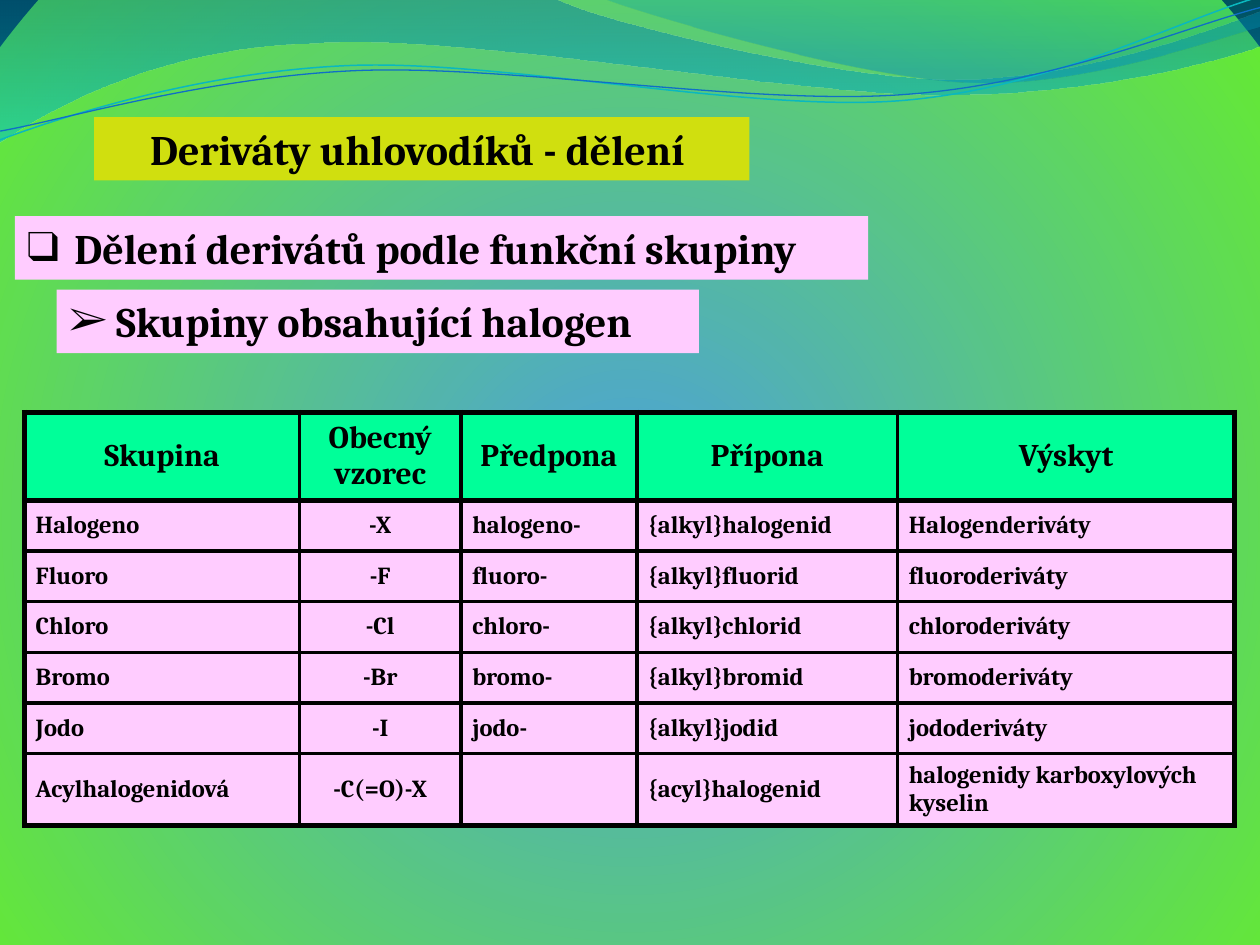
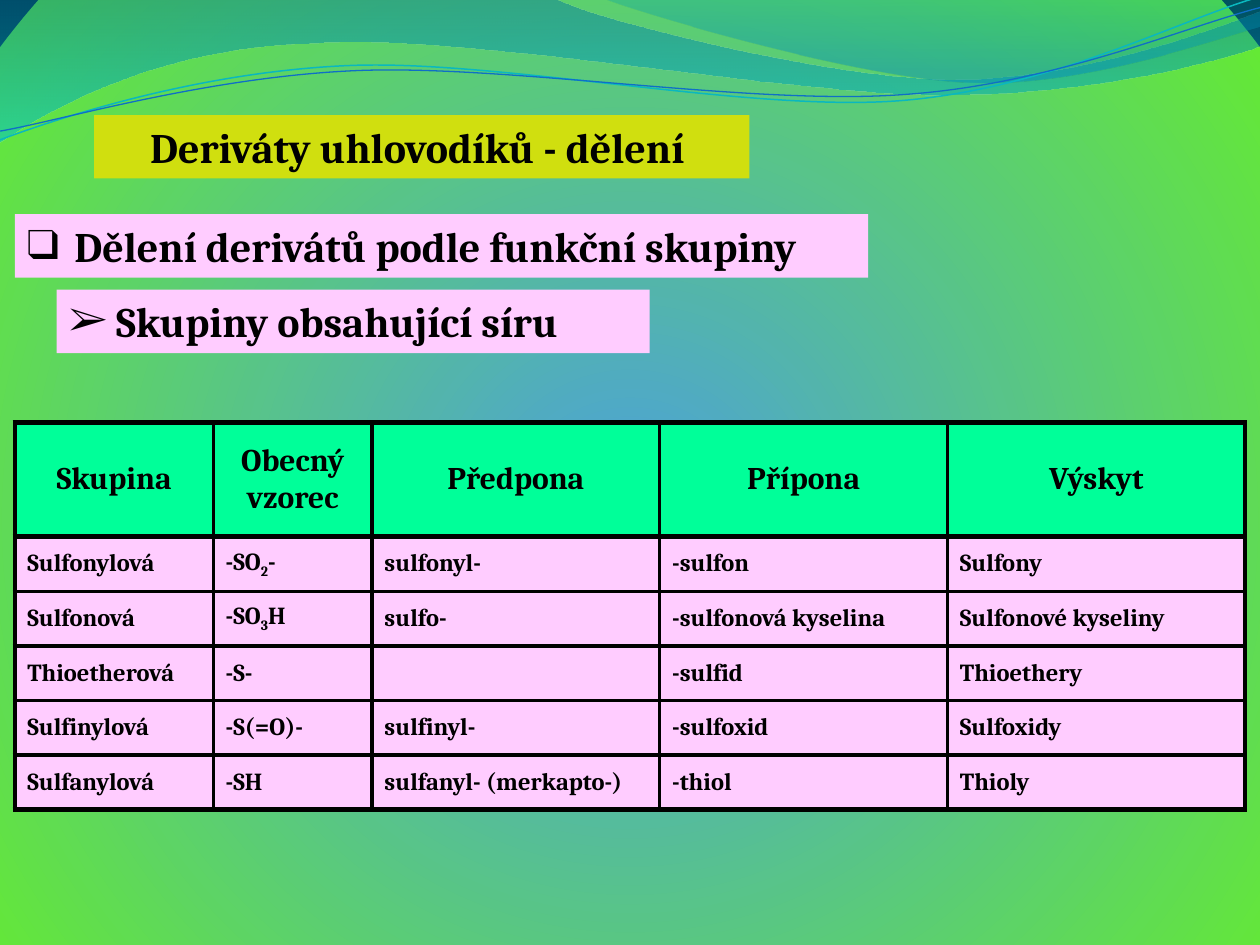
import dataclasses
import math

import pptx
import pptx.dml.color
import pptx.enum.text
import pptx.oxml
import pptx.oxml.ns
import pptx.util
from lxml import etree

Cm, Pt = pptx.util.Cm, pptx.util.Pt
RGB = pptx.dml.color.RGBColor.from_string
ALIGN = pptx.enum.text.PP_ALIGN
MIDDLE = pptx.enum.text.MSO_ANCHOR.MIDDLE
FIT_SHAPE = pptx.enum.text.MSO_AUTO_SIZE.SHAPE_TO_FIT_TEXT
qn = pptx.oxml.ns.qn
NS = 'xmlns:a="http://schemas.openxmlformats.org/drawingml/2006/main"'


@dataclasses.dataclass(frozen=True)
class Theme:
    font: str = "Cambria"
    ink: str = "000000"
    title_fill: str = "D0DF0F"
    box_fill: str = "FFCCFF"
    head_fill: str = "00FF99"
    heading_pt: int = 24
    head_pt: int = 18
    body_pt: int = 14
    outer_line: float = 3
    inner_line: float = 2.25
    # Gradient stops: position %, colour, opacity %
    backdrop: tuple = ((0, "4C9FDD", 100), (100, "64E935", 100), (100, "003141", 100))


T = Theme()

# Content; lengths in cm, a tuple in a cell alternates normal and subscript text
TITLE = "Deriváty uhlovodíků - dělení "
SECTION = "Dělení derivátů podle funkční skupiny"
HEADER = ["Skupina", "Obecný vzorec", "Předpona", "Přípona", "Výskyt"]

SLIDES = [
    {
        "title_top": 2.36, "section_top": 4.36,
        "topic": "Skupiny obsahující halogen", "topic_width": 12.95,
        "table_at": (0.49, 8.31), "margin": 0.23, "formula_align": ALIGN.CENTER,
        "cols": [5.55, 3.25, 3.55, 5.25, 6.8],
        "row_heights": [1.73] + [1.02] * 5 + [1.45],
        "rows": [
            ["Halogeno", "-X", "halogeno-", "{alkyl}halogenid", "Halogenderiváty"],
            ["Fluoro", "-F", "fluoro-", "{alkyl}fluorid", "fluoroderiváty"],
            ["Chloro", "-Cl", "chloro-", "{alkyl}chlorid", "chloroderiváty"],
            ["Bromo", "-Br", "bromo-", "{alkyl}bromid", "bromoderiváty"],
            ["Jodo", "-I", "jodo-", "{alkyl}jodid", "jododeriváty"],
            ["Acylhalogenidová", "-C(=O)-X", "", "{acyl}halogenid",
             "halogenidy karboxylových kyselin"],
        ],
    },
    {
        "title_top": 2.32, "section_top": 4.32,
        "topic": "Skupiny obsahující síru", "topic_width": 11.96,
        "table_at": (0.3, 8.52), "margin": 0.25, "formula_align": ALIGN.LEFT,
        "cols": [4, 3.2, 5.8, 5.8, 6],
        "row_heights": [2.3] + [1.1] * 5,
        "rows": [
            ["Sulfonylová", ("-SO", "2", "-"), "sulfonyl-", "-sulfon", "Sulfony"],
            ["Sulfonová", ("-SO", "3", "H"), "sulfo-", "-sulfonová kyselina",
             "Sulfonové kyseliny"],
            ["Thioetherová", "-S-", "", "-sulfid", "Thioethery"],
            ["Sulfinylová", "-S(=O)-", "sulfinyl-", "-sulfoxid", "Sulfoxidy"],
            ["Sulfanylová", "-SH", "sulfanyl- (merkapto-)", "-thiol", "Thioly"],
        ],
    },
]

# Waves, in tenths of the slide width: 2 numbers make a line, 6 a Bézier curve
WAVES = [
    {"start": (0, 0), "stops": ((0, "0074A1", 45), (100, "00C6CF", 55)),
     "steps": [(4.4, -0.01), (4.76, 0.17, 6.64, 0.63, 7.58, 0.63),
               (8.53, 0.63, 9.58, 0.26, 10, 0.09), (10.01, 0.36),
               (9.83, 0.44, 8.7, 0.76, 7.46, 0.75),
               (6.22, 0.75, 3.82, 0.28, 2.57, 0.34),
               (1.29, 0.36, 0.46, 0.83, -0.01, 1.13)]},
    {"start": (4.79, -0.01), "stops": ((0, "00A1A9", 30), (80, "008BBF", 45)),
     "steps": [(5.09, 0.11, 6.82, 0.62, 7.69, 0.65),
               (8.56, 0.69, 9.61, 0.32, 10, 0.21), (10, 0)]},
    {"start": (0, 1.11), "line": ("0AB8BF", 0.85), "pivot": (4.99, 0.57),
     "steps": [(0.48, 0.93, 1.58, 0.57, 2.77, 0.52),
               (3.95, 0.47, 5.93, 0.89, 7.13, 0.8),
               (8.33, 0.71, 9.38, 0.15, 9.98, -0.02)]},
    {"start": (0, 1.04), "line": ("0F6FC6", 0.75), "pivot": (4.99, 0.59),
     "steps": [(0.47, 0.96, 1.64, 0.61, 2.83, 0.56),
               (4.03, 0.51, 5.97, 0.84, 7.17, 0.75),
               (8.36, 0.67, 9.41, 0.21, 10, 0.06)]},
]
TILT = -2.7


def swap_gradient(parent, stops, direction):
    """Replace the solid fill inside parent by a gradient."""
    gs = "".join(
        f'<a:gs pos="{pos * 1000}"><a:srgbClr val="{color}">'
        f'<a:alpha val="{alpha * 1000}"/></a:srgbClr></a:gs>'
        for pos, color, alpha in stops)
    grad = pptx.oxml.parse_xml(
        f'<a:gradFill {NS} rotWithShape="1"><a:gsLst>{gs}</a:gsLst>{direction}</a:gradFill>')
    parent.replace(parent.find(qn("a:solidFill")), grad)


def set_backdrop(master):
    fill = master.background.fill
    fill.solid()
    fill.fore_color.rgb = RGB(T.ink)
    swap_gradient(
        master.element.find(".//" + qn("p:bgPr")), T.backdrop,
        '<a:path path="circle">'
        '<a:fillToRect l="10000" t="110000" r="10000" b="100000"/></a:path>')


def level(point, pivot):
    """Turn a point back by the tilt that its shape will get."""
    a = math.radians(-TILT)
    x, y = point[0] - pivot[0], point[1] - pivot[1]
    return (pivot[0] + x * math.cos(a) - y * math.sin(a),
            pivot[1] + x * math.sin(a) + y * math.cos(a))


def bend(sp, steps):
    """Join each three points of a six-number step into one curve."""
    lines = list(sp.element.iter(qn("a:lnTo")))
    for step in steps:
        group, lines = lines[:len(step) // 2], lines[len(step) // 2:]
        if len(group) == 3:
            curve = etree.Element(qn("a:cubicBezTo"))
            group[0].addprevious(curve)
            for line in group:
                curve.append(line[0])
                line.getparent().remove(line)


def add_wave(slide, start, steps, stops=None, line=None, pivot=None):
    points = [start] + [s[i:i + 2] for s in steps for i in range(0, len(s), 2)]
    if pivot:
        points = [level(point, pivot) for point in points]
    points = [(Cm(x * 2.54), Cm(y * 2.54)) for x, y in points]
    builder = slide.shapes.build_freeform(*points[0])
    builder.add_line_segments(points[1:], close=bool(stops))
    sp = builder.convert_to_shape()
    bend(sp, steps)
    sp.shadow.inherit = False
    if stops:
        sp.fill.solid()
        swap_gradient(sp.element.spPr, stops, '<a:lin ang="5400000" scaled="0"/>')
        sp.line.fill.background()
    else:
        sp.rotation = TILT
        sp.fill.background()
        sp.line.color.rgb = RGB(line[0])
        sp.line.width = Pt(line[1])
    return sp


def move_to_master(master, shapes):
    """Let every slide inherit the shapes."""
    tree = master.shapes.element if hasattr(master.shapes, "element") else master.shapes._spTree
    for i, sp in enumerate(shapes):
        sp.element.nvSpPr.cNvPr.set("id", str(100 + i))
        tree.insert(2 + i, sp.element)


def write(tf, text, size=T.body_pt, align=ALIGN.LEFT, bullet=None):
    tf.word_wrap = True
    p = tf.paragraphs[0]
    p.alignment = align
    for i, part in enumerate(text if isinstance(text, tuple) else (text,)):
        if not part:
            continue
        r = p.add_run()
        r.text = part
        r.font.name, r.font.size, r.font.bold = T.font, Pt(size), True
        r.font.color.rgb = RGB(T.ink)
        if i % 2:
            r.font._element.set("baseline", "-25000")
    if bullet:
        pPr = p._p.get_or_add_pPr()
        pPr.set("marL", str(Cm(0.95)))
        pPr.set("indent", str(-Cm(0.95)))
        etree.SubElement(pPr, qn("a:buFont")).set("typeface", T.font)
        etree.SubElement(pPr, qn("a:buChar")).set("char", bullet)


def add_heading(slide, text, left, top, width, fill, **fmt):
    sp = slide.shapes.add_textbox(Cm(left), Cm(top), Cm(width), Cm(1.28))
    sp.fill.solid()
    sp.fill.fore_color.rgb = RGB(fill)
    sp.text_frame.auto_size = FIT_SHAPE
    write(sp.text_frame, text, size=T.heading_pt, **fmt)


def set_borders(cell, widths):
    """Put lines on the left, right, top and bottom of a cell."""
    tcPr = cell._tc.get_or_add_tcPr()
    for i, (side, width) in enumerate(zip("LRTB", widths)):
        tcPr.insert(i, pptx.oxml.parse_xml(
            f'<a:ln{side} {NS} w="{Pt(width)}"><a:solidFill>'
            f'<a:srgbClr val="{T.ink}"/></a:solidFill></a:ln{side}>'))


def add_groups_table(slide, data):
    rows = [HEADER] + data["rows"]
    cols, heights = data["cols"], data["row_heights"]
    left, top = data["table_at"]
    table = slide.shapes.add_table(
        len(rows), len(cols), Cm(left), Cm(top), Cm(sum(cols)), Cm(sum(heights))).table
    table.first_row = table.horz_banding = False
    for col, width in zip(table.columns, cols):
        col.width = Cm(width)
    for row, height in zip(table.rows, heights):
        row.height = Cm(height)

    last_row, last_col = len(rows) - 1, len(cols) - 1
    for i, row in enumerate(rows):
        for j, text in enumerate(row):
            cell = table.cell(i, j)
            cell.vertical_anchor = MIDDLE
            cell.margin_left = cell.margin_right = Cm(data["margin"])
            cell.fill.solid()
            cell.fill.fore_color.rgb = RGB(T.box_fill if i else T.head_fill)
            # Thick lines run around the table and under its header
            thick = (j == 0, j == last_col, i <= 1, i in (0, last_row))
            set_borders(cell, [T.outer_line if t else T.inner_line for t in thick])
            if i == 0:
                write(cell.text_frame, text, size=T.head_pt, align=ALIGN.CENTER)
            else:
                align = data["formula_align"] if j == 1 else ALIGN.LEFT
                write(cell.text_frame, text, align=align)


def fill_slide(slide, data):
    add_heading(slide, TITLE, 1.9, data["title_top"], 13.21, T.title_fill,
                align=ALIGN.CENTER)
    add_heading(slide, SECTION, 0.3, data["section_top"], 17.2, T.box_fill, bullet="❑")
    add_heading(slide, data["topic"], 1.14, 5.84, data["topic_width"], T.box_fill,
                bullet="➢")
    add_groups_table(slide, data)


def main():
    prs = pptx.Presentation()
    prs.slide_width, prs.slide_height = Cm(25.4), Cm(19.05)
    set_backdrop(prs.slide_master)
    slides = [prs.slides.add_slide(prs.slide_layouts[6]) for _ in SLIDES]
    move_to_master(prs.slide_master, [add_wave(slides[0], **wave) for wave in WAVES])
    for slide, data in zip(slides, SLIDES):
        fill_slide(slide, data)
    prs.save("out.pptx")


if __name__ == "__main__":
    main()
